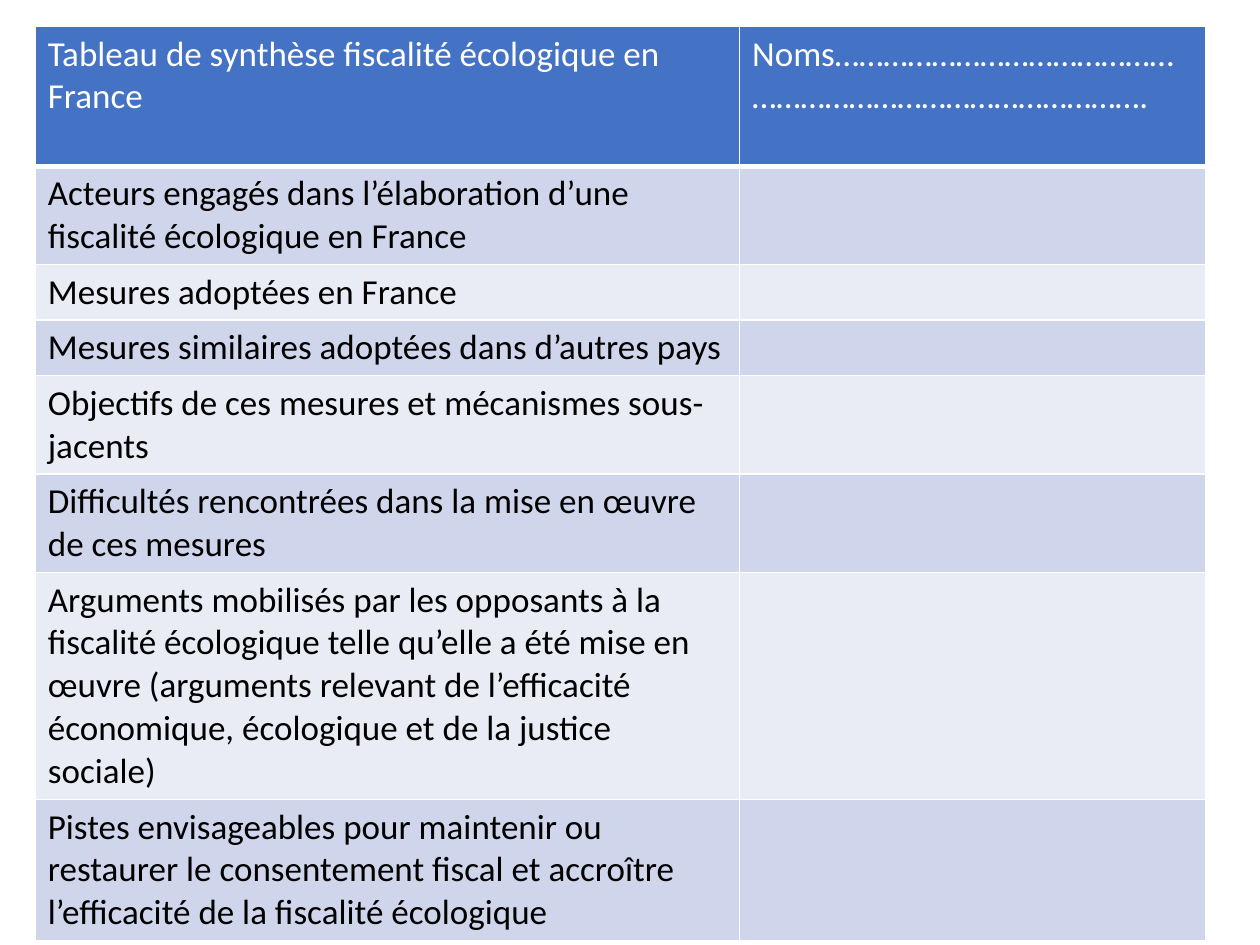
from lxml import etree
from pptx import Presentation
from pptx.dml.color import RGBColor
from pptx.oxml.ns import qn
from pptx.util import Inches, Pt

# Content: label, answer, row height in inches
ROWS = [
    ("Tableau de synthèse fiscalité écologique en France",
     "Noms……………………………………………………………………………….", 1.11),
    ("Acteurs engagés dans l’élaboration d’une fiscalité écologique en France", "", 0.78),
    ("Mesures adoptées en France", "", 0.44),
    ("Mesures similaires adoptées dans d’autres pays", "", 0.44),
    ("Objectifs de ces mesures et mécanismes sous-jacents", "", 0.78),
    ("Difficultés rencontrées dans la mise en œuvre de ces mesures", "", 0.78),
    ("Arguments mobilisés par les opposants à la fiscalité écologique telle qu’elle "
     "a été mise en œuvre (arguments relevant de l’efficacité économique, écologique "
     "et de la justice sociale)", "", 1.8),
    ("Pistes envisageables pour maintenir ou restaurer le consentement fiscal et "
     "accroître l’efficacité de la fiscalité écologique", "", 1.12),
]
COLUMNS = (5.59, 3.7)
LEFT, TOP = 0.28, 0.21

THEME = {
    "font": "Calibri", "size": 20,
    "header": "4472C4", "bands": ("E9EBF5", "CFD5EA"),
    "header_text": "FFFFFF", "text": "000000",
    "border": "FFFFFF", "thin": 1, "thick": 3,
}


def set_borders(cell, bottom):
    properties = cell._tc.get_or_add_tcPr()
    for side in ("lnL", "lnR", "lnT", "lnB"):
        width = bottom if side == "lnB" else THEME["thin"]
        line = etree.SubElement(properties, qn(f"a:{side}"), w=str(Pt(width)))
        fill = etree.SubElement(line, qn("a:solidFill"))
        etree.SubElement(fill, qn("a:srgbClr"), val=THEME["border"])


def format_cell(cell, content, is_header, band):
    set_borders(cell, THEME["thick"] if is_header else THEME["thin"])
    cell.fill.solid()
    cell.fill.fore_color.rgb = RGBColor.from_string(THEME["header"] if is_header else band)
    cell.text = content
    font = cell.text_frame.paragraphs[0].font
    font.name, font.size, font.bold = THEME["font"], Pt(THEME["size"]), False
    font.color.rgb = RGBColor.from_string(THEME["header_text" if is_header else "text"])


# Page
deck = Presentation()
deck.slide_width, deck.slide_height = Inches(10), Inches(7.5)
page = deck.slides.add_slide(deck.slide_layouts[6])

# Summary table
height = sum(row[-1] for row in ROWS)
table = page.shapes.add_table(
    len(ROWS), len(COLUMNS), Inches(LEFT), Inches(TOP),
    Inches(sum(COLUMNS)), Inches(height)).table
for column, width in zip(table.columns, COLUMNS):
    column.width = Inches(width)
for index, (label, answer, row_height) in enumerate(ROWS):
    table.rows[index].height = Inches(row_height)
    for column, content in enumerate((label, answer)):
        format_cell(table.cell(index, column), content, index == 0, THEME["bands"][index % 2])

deck.save("out.pptx")
